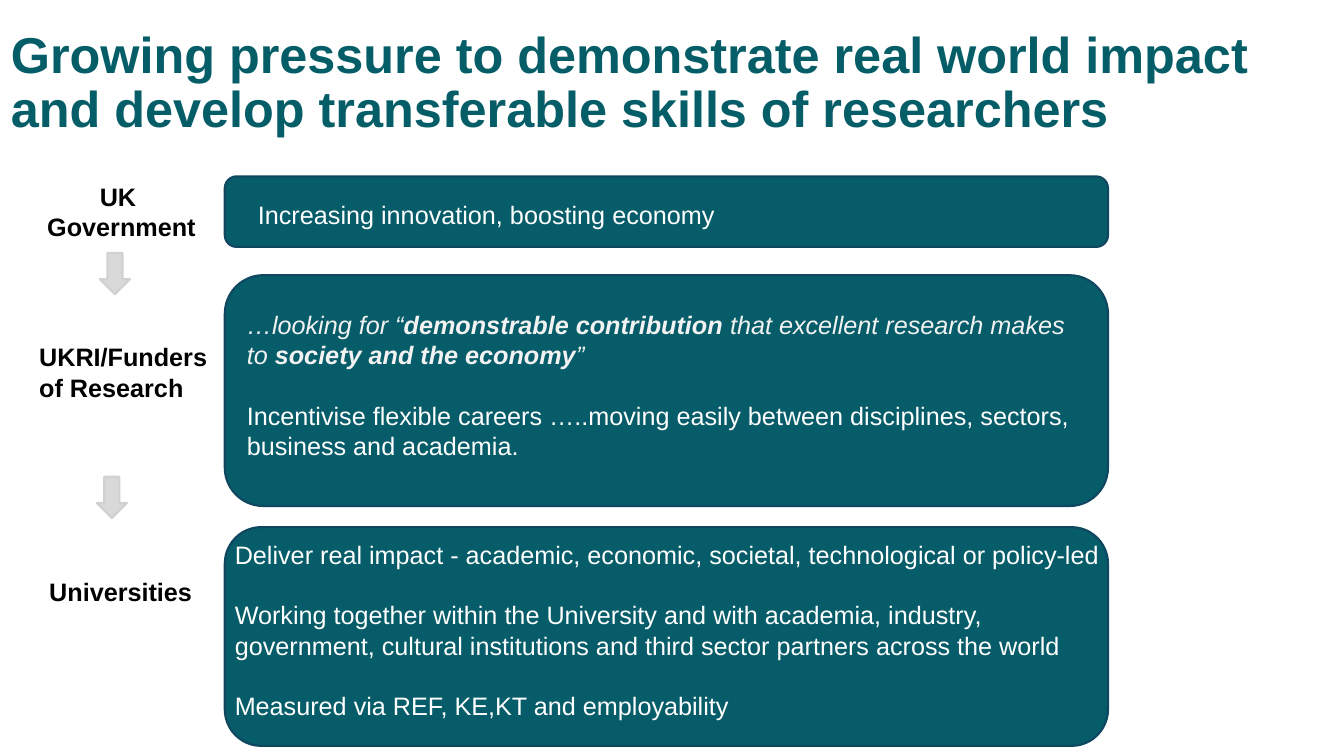
from dataclasses import dataclass

import pptx
import pptx.dml.color
import pptx.enum.shapes
import pptx.enum.text
import pptx.util

EMU_PER_PX = 9144  # 100 px to the inch
SHAPES = pptx.enum.shapes.MSO_SHAPE
ALIGN = pptx.enum.text.PP_ALIGN
ANCHOR = pptx.enum.text.MSO_ANCHOR
TEAL, TEAL_EDGE, TITLE_TEAL = "065C68", "104760", "055D67"
ARROW_GREY, ARROW_EDGE = "D9D9D9", "D1D1D1"
BLACK, WHITE, OFF_WHITE = "000000", "FFFFFF", "F2F2F2"
BODY_SIZE = 18
LINE_GAP = 21.6  # one line of body text, in points


@dataclass(frozen=True)
class Box:
    left: int
    top: int
    width: int
    height: int

    def emu(self) -> tuple[int, ...]:
        return tuple(px(n) for n in (self.left, self.top, self.width, self.height))


@dataclass(frozen=True)
class Paragraph:
    """Text split into runs; every second run is bold when emphasis is set."""
    runs: tuple[str, ...]
    color: str = WHITE
    bold: bool = False
    italic: bool = False
    emphasis: bool = False
    size: int = BODY_SIZE
    align: ALIGN = ALIGN.LEFT
    line_spacing: float = 1.0


@dataclass(frozen=True)
class TextBlock:
    box: Box
    paragraphs: tuple[Paragraph, ...]
    gap: float = 0
    margin_top: int = 5
    anchor: ANCHOR = ANCHOR.TOP


def px(length: int) -> pptx.util.Emu:
    return pptx.util.Emu(length * EMU_PER_PX)


def rgb(value: str) -> pptx.dml.color.RGBColor:
    return pptx.dml.color.RGBColor.from_string(value)


def label(*lines: str, align: ALIGN = ALIGN.LEFT) -> tuple[Paragraph, ...]:
    return tuple(Paragraph((line,), BLACK, bold=True, align=align) for line in lines)


PANELS = [Box(223, top, 876, height) for top, height in ((175, 70), (273, 229), (523, 217))]
ARROWS = [Box(99, 251, 30, 41), Box(96, 473, 30, 41)]

TITLE = TextBlock(
    Box(1, 11, 1333, 145),
    (Paragraph(
        ("Growing pressure to demonstrate real world impact and develop "
         "transferable skills of researchers",),
        TITLE_TEAL, bold=True, size=36, line_spacing=0.9),),
    anchor=ANCHOR.MIDDLE,
)

LABELS = [
    TextBlock(Box(12, 175, 217, 71), label("UK ", "Government", align=ALIGN.CENTER)),
    TextBlock(Box(29, 334, 205, 71), label("UKRI/Funders of Research")),
    TextBlock(Box(39, 567, 177, 40), label("Universities")),
]

STATEMENTS = [
    TextBlock(Box(246, 193, 657, 40),
              (Paragraph(("Increasing innovation, boosting economy",)),)),
    TextBlock(
        Box(235, 272, 846, 222),
        (
            Paragraph(
                ("…looking for “", "demonstrable contribution ",
                 "that excellent research makes to ", "society and the economy", "”"),
                OFF_WHITE, italic=True, emphasis=True),
            Paragraph(("Incentivise flexible careers …..moving easily between "
                       "disciplines, sectors, business and academia.",)),
        ),
        gap=LINE_GAP, margin_top=35,
    ),
    TextBlock(
        Box(223, 530, 888, 222),
        (
            Paragraph(("Deliver real impact - academic, economic, societal, "
                       "technological or policy-led",)),
            Paragraph(("Working together within the University and with academia, "
                       "industry, government, cultural institutions and third sector "
                       "partners across the world",)),
            Paragraph(("Measured via REF, KE,KT and employability",)),
        ),
        gap=LINE_GAP,
    ),
]


def add_filled_shape(slide: pptx.slide.Slide, kind: SHAPES, box: Box,
                     fill: str, edge: str) -> None:
    shape = slide.shapes.add_shape(kind, *box.emu())
    shape.shadow.inherit = False
    shape.fill.solid()
    shape.fill.fore_color.rgb = rgb(fill)
    shape.line.color.rgb = rgb(edge)
    shape.line.width = pptx.util.Pt(1.5)


def add_text(slide: pptx.slide.Slide, block: TextBlock) -> None:
    frame = slide.shapes.add_textbox(*block.box.emu()).text_frame
    frame.word_wrap = True
    frame.vertical_anchor = block.anchor
    frame.margin_top = px(block.margin_top)
    for index, item in enumerate(block.paragraphs):
        paragraph = frame.add_paragraph() if index else frame.paragraphs[0]
        if index and block.gap:
            paragraph.space_before = pptx.util.Pt(block.gap)
        paragraph.alignment = item.align
        paragraph.line_spacing = item.line_spacing
        font = paragraph.font
        font.name = "Arial"
        font.size = pptx.util.Pt(item.size)
        font.color.rgb = rgb(item.color)
        font.italic = item.italic
        if not item.emphasis:
            font.bold = item.bold
        for position, text in enumerate(item.runs):
            run = paragraph.add_run()
            run.text = text
            if item.emphasis:
                run.font.bold = position % 2 == 1


def main() -> None:
    presentation = pptx.Presentation()
    presentation.slide_width = px(1333)
    presentation.slide_height = px(750)
    slide = presentation.slides.add_slide(presentation.slide_layouts[6])
    for panel in PANELS:
        add_filled_shape(slide, SHAPES.ROUNDED_RECTANGLE, panel, TEAL, TEAL_EDGE)
    for block in (TITLE, *LABELS, *STATEMENTS):
        add_text(slide, block)
    for arrow in ARROWS:
        add_filled_shape(slide, SHAPES.DOWN_ARROW, arrow, ARROW_GREY, ARROW_EDGE)
    presentation.save("out.pptx")


if __name__ == "__main__":
    main()
